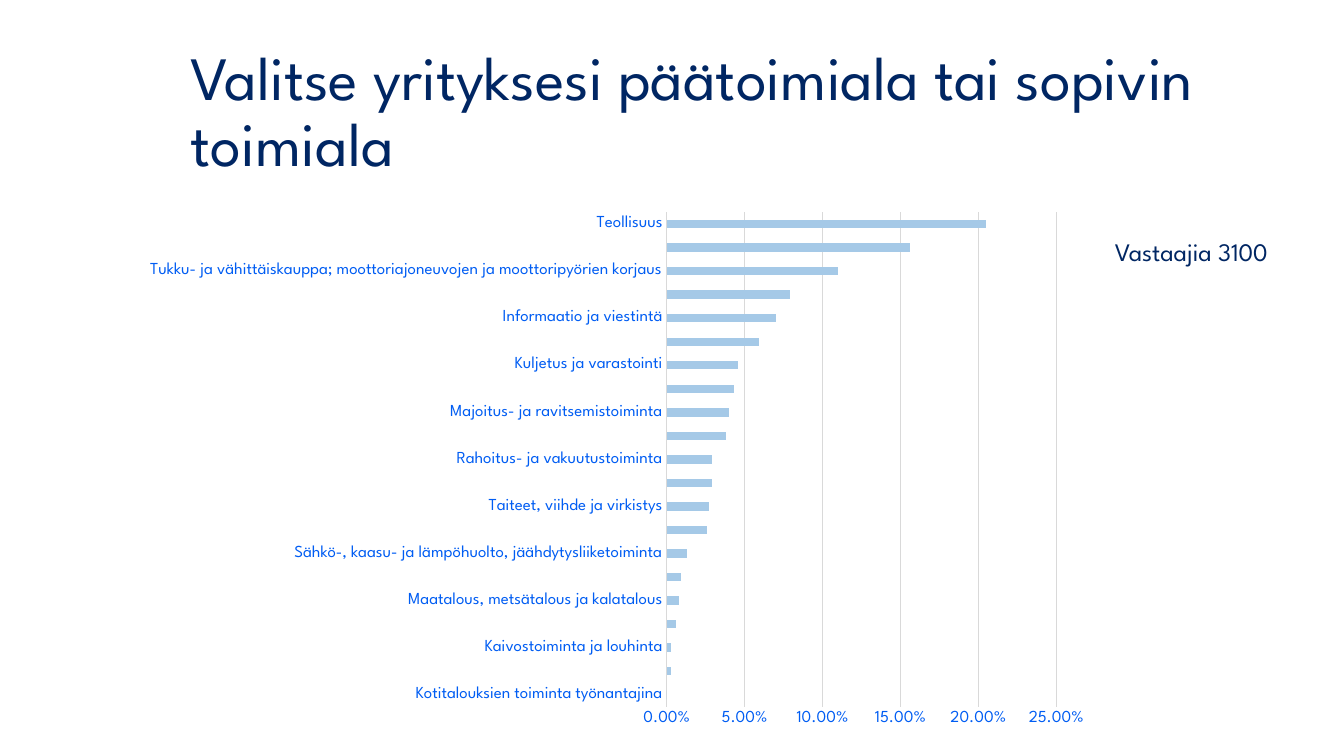
import pptx
import pptx.chart.data
import pptx.dml.color
import pptx.enum.chart
import pptx.enum.text
import pptx.oxml
import pptx.oxml.ns
import pptx.util

Inches = pptx.util.Inches
Pt = pptx.util.Pt
RGBColor = pptx.dml.color.RGBColor

NAVY = RGBColor(0x00, 0x26, 0x63)
BLUE = RGBColor(0x00, 0x5D, 0xF3)
LIGHT_BLUE = RGBColor(0xA5, 0xC9, 0xE7)
GRID_GREY = RGBColor(0xD9, 0xD9, 0xD9)
FONT = "League Spartan"

# Industries and their share of respondents, from the bottom bar up
INDUSTRIES = [
    ("Kotitalouksien toiminta työnantajina", 0),
    ("Kansainvälisten organisaatioiden ja toimielinten toiminta", 0.003),
    ("Kaivostoiminta ja louhinta", 0.003),
    ("Julkinen hallinto ja maanpuolustus; pakollinen sosiaalivakuutus", 0.006),
    ("Maatalous, metsätalous ja kalatalous", 0.008),
    ("Vesihuolto, viemäri- ja jätevesihuolto, jätehuolto ja muu ympäristön puhtaanapito", 0.009),
    ("Sähkö-, kaasu- ja lämpöhuolto, jäähdytysliiketoiminta", 0.013),
    ("Koulutus", 0.026),
    ("Taiteet, viihde ja virkistys", 0.027),
    ("Terveys- ja sosiaalipalvelut", 0.029),
    ("Rahoitus- ja vakuutustoiminta", 0.029),
    ("Kiinteistöalan toiminta", 0.038),
    ("Majoitus- ja ravitsemistoiminta", 0.04),
    ("Ammatillinen, tieteellinen ja tekninen toiminta", 0.043),
    ("Kuljetus ja varastointi", 0.046),
    ("Hallinto- ja tukipalvelutoiminta", 0.059),
    ("Informaatio ja viestintä", 0.07),
    ("Rakentaminen", 0.079),
    ("Tukku- ja vähittäiskauppa; moottoriajoneuvojen ja moottoripyörien korjaus", 0.11),
    ("Muu palvelutoiminta", 0.156),
    ("Teollisuus", 0.205),
]


def style_font(font, size, color):
    font.name = FONT
    font.size = Pt(size)
    font.bold = False
    font.color.rgb = color


deck = pptx.Presentation()
deck.slide_width = Inches(13.33)
deck.slide_height = Inches(7.5)
page = deck.slides.add_slide(deck.slide_layouts[5])

# Title
title = page.shapes.title
title.left, title.top = Inches(1.79), Inches(0.4)
title.width, title.height = Inches(10.94), Inches(1.45)
title.text_frame.vertical_anchor = pptx.enum.text.MSO_ANCHOR.MIDDLE
title.text_frame.auto_size = pptx.enum.text.MSO_AUTO_SIZE.NONE
para = title.text_frame.paragraphs[0]
para.alignment = pptx.enum.text.PP_ALIGN.LEFT
para.line_spacing = 0.9
span = para.add_run()
span.text = "Valitse yrityksesi päätoimiala tai sopivin toimiala"
style_font(span.font, 44, NAVY)

# Bar chart
chart_data = pptx.chart.data.CategoryChartData(number_format="0.00%")
chart_data.categories = [name for name, share in INDUSTRIES]
chart_data.add_series("Series 1", [share for name, share in INDUSTRIES])
chart = page.shapes.add_chart(
    pptx.enum.chart.XL_CHART_TYPE.BAR_CLUSTERED,
    Inches(1.3), Inches(2), Inches(9.66), Inches(5.33), chart_data).chart
chart.has_title = False
chart.has_legend = False
style_font(chart.font, 10, NAVY)

plot = chart.plots[0]
plot.gap_width = 182
plot.vary_by_categories = False
bars = plot.series[0]
bars.format.fill.solid()
bars.format.fill.fore_color.rgb = LIGHT_BLUE

# Axes
for axis in (chart.category_axis, chart.value_axis):
    axis.major_tick_mark = pptx.enum.chart.XL_TICK_MARK.NONE
    axis.minor_tick_mark = pptx.enum.chart.XL_TICK_MARK.NONE
    style_font(axis.tick_labels.font, 12, BLUE)
chart.category_axis.has_major_gridlines = False
chart.value_axis.has_major_gridlines = True
chart.value_axis.minimum_scale = 0
chart.value_axis.maximum_scale = 0.25
chart.value_axis.major_unit = 0.05
chart.value_axis.tick_labels.number_format = "0.00%"
chart.value_axis.tick_labels.number_format_is_linked = False
chart.value_axis.format.line.fill.background()
for line in (chart.category_axis.format.line,
             chart.value_axis.major_gridlines.format.line):
    line.color.rgb = GRID_GREY
    line.width = Pt(0.75)

# Plot area inside the chart frame, leaving room for the long labels
plot_area = chart.element.find(".//" + pptx.oxml.ns.qn("c:plotArea"))
for old_layout in plot_area.findall(pptx.oxml.ns.qn("c:layout")):
    plot_area.remove(old_layout)
plot_area.insert(0, pptx.oxml.parse_xml(
    f'<c:layout {pptx.oxml.ns.nsdecls("c")}><c:manualLayout>'
    '<c:layoutTarget val="inner"/><c:xMode val="edge"/><c:yMode val="edge"/>'
    '<c:x val="0.55"/><c:y val="0.02"/><c:w val="0.4"/><c:h val="0.92"/>'
    '</c:manualLayout></c:layout>'))

# Number of respondents
box = page.shapes.add_textbox(Inches(10.96), Inches(2.3), Inches(1.98), Inches(0.4))
box.text_frame.word_wrap = False
box.text_frame.auto_size = pptx.enum.text.MSO_AUTO_SIZE.SHAPE_TO_FIT_TEXT
span = box.text_frame.paragraphs[0].add_run()
span.text = "Vastaajia 3100"
style_font(span.font, 18, NAVY)

deck.save("out.pptx")
